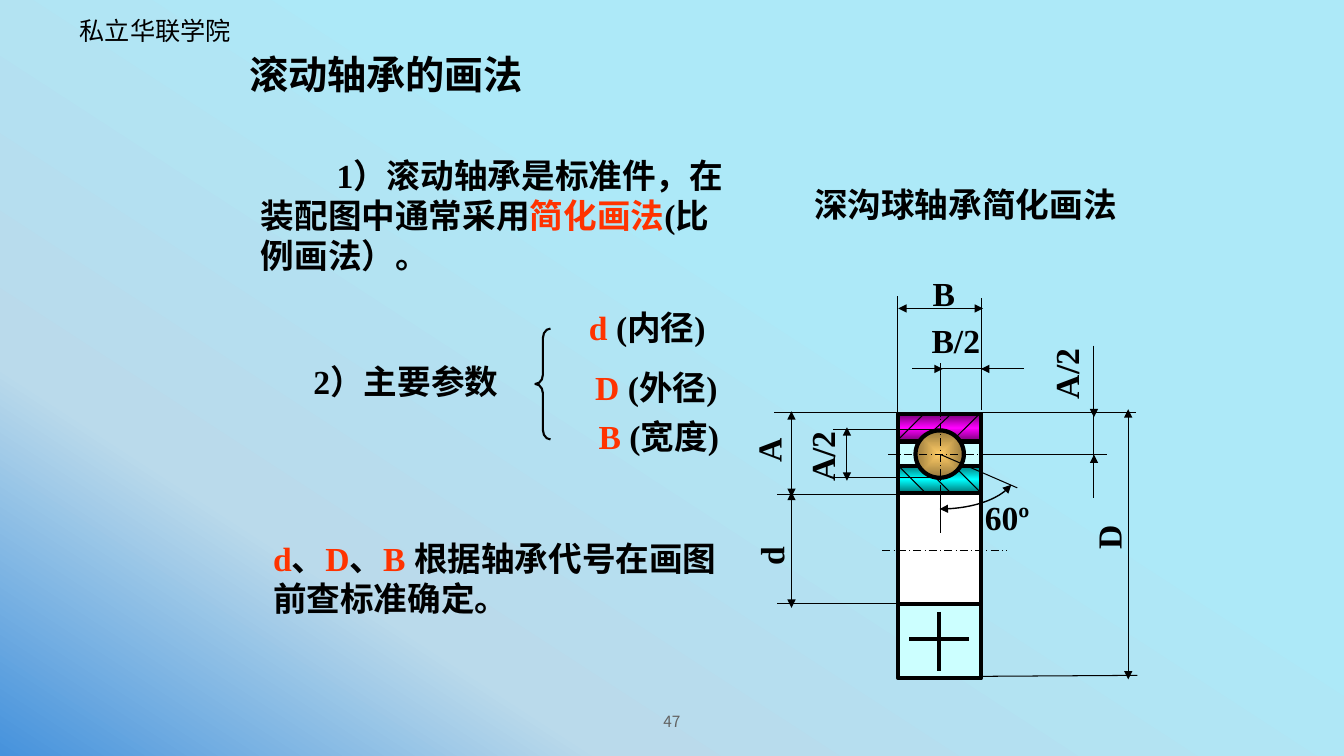
"""Builds a slide on the simplified drawing of a rolling bearing."""
from pptx import Presentation
from pptx.dml.color import RGBColor
from pptx.enum.dml import MSO_LINE
from pptx.enum.shapes import MSO_CONNECTOR, MSO_SHAPE
from pptx.enum.text import MSO_ANCHOR, PP_ALIGN
from pptx.oxml import parse_xml
from pptx.oxml.ns import nsdecls, qn
from pptx.util import Cm, Pt
from lxml.etree import SubElement

BLACK, RED = "000000", "FF3300"
SANS, SERIF = "Noto Sans CJK SC", "Times New Roman"
LEFT, RIGHT, TOP, BOTTOM = 8.91, 9.73, 4.11, 6.73
WIDTH, RING = RIGHT - LEFT, 0.27
BORE_TOP, BORE_BOTTOM = 4.89, 5.99
MIDDLE, BALL_Y, AXIS_Y = 9.33, 4.51, 5.46

TITLE = "滚动轴承的画法"
SKY = [(0, "4692DC"), (24, "BADAEB"), (62, "ADE9F8")]
OUTER_RING = [(0, "760076"), (50, "FF00FF"), (100, "760076")]
INNER_RING = [(0, "007676"), (50, "00FFFF"), (100, "007676")]
BALL = [(0, "FFCC66"), (100, "96783C")]

PARAGRAPHS = [
    ((2.49, 1.48, 4.94, 1.31), 0.75,
     [("1）滚动轴承是标准件，在装配图中通常采用", BLACK), ("简化画法", RED), ("(比例画法）。", BLACK)]),
    ((2.61, 5.28, 4.9, 0.91), 0,
     [("d", RED), ("、", BLACK), ("D", RED), ("、", BLACK), ("B ", RED),
      ("根据轴承代号在画图前查标准确定。", BLACK)]),
]
PARAMETERS = [
    ((5.18, 2.99, 2.48, 0.5), "d", " (内径)"),
    ((5.21, 3.59, 2.6, 0.5), "D", " (外径)"),
    ((5.36, 4.08, 2.35, 0.5), "B", " (宽度)"),
]
DIMENSIONS = [
    ("d", (7.45, 5.27, 0.39, 0.5), 270),
    ("D", (10.77, 5.08, 0.44, 0.5), 270),
    ("A", (7.4, 4.22, 0.44, 0.5), 270),
    ("A/2", (7.8, 4.28, 0.7, 0.5), 270),
    ("A/2", (10.22, 3.46, 0.7, 0.5), 270),
    ("B", (9.15, 2.66, 0.42, 0.5), 0),
    ("B/2", (9.14, 3.12, 0.68, 0.5), 0),
    ("60º", (9.67, 4.88, 0.64, 0.5), 0),
]
HATCHING = [
    (LEFT, 4.36, 9.17, 4.1), (9.26, 4.27, 9.43, TOP), (9.48, 4.34, 9.7, 4.12),
    (9.51, 4.67, RIGHT, BORE_TOP), (9.28, 4.74, 9.43, BORE_TOP), (LEFT, 4.62, 9.18, BORE_TOP),
]
CENTRE_LINES = [(8.81, BALL_Y, 9.9, BALL_Y), (MIDDLE, 4.04, MIDDLE, 5.06)]
EXTENSION_LINES = [
    (LEFT, 4.91, 7.71, 4.91), (LEFT, BORE_BOTTOM, 7.71, BORE_BOTTOM),
    (9.71, 4.09, 11.27, 4.09), (9.71, 6.71, 11.28, 6.7),
    (9.31, 4.74, 8.23, 4.74), (9.3, 4.26, 8.26, 4.26), (8.95, 4.09, 7.68, 4.09),
    (9.75, BALL_Y, 10.98, BALL_Y), (10.85, 3.43, 10.85, 4.94),
    (8.9, TOP, 8.9, 2.94), (RIGHT, 4.07, RIGHT, 2.96),
    (MIDDLE, 4.14, MIDDLE, 3.6), (9.05, 3.66, 10.16, 3.66), (MIDDLE, BALL_Y, 10.09, 4.84),
]
DOUBLE_ARROWS = [
    (7.85, 4.88, 7.85, 6.03), (11.19, 4.06, 11.19, 6.74), (8.4, 4.24, 8.4, 4.77),
    (7.85, 4.08, 7.85, 4.93), (LEFT, 3.06, 9.75, 3.06),
]
SINGLE_ARROWS = [
    (10.85, 3.99, 10.85, 4.14), (10.85, 4.65, 10.85, BALL_Y),
    (9.16, 3.66, 9.35, 3.66), (9.94, 3.66, RIGHT, 3.66),
]
CROSS = [(9.02, 6.34, 9.61, 6.34), (9.31, 6.07, 9.31, 6.66)]
ANGLE_ARC = [(9.32, 5.05), (9.63, 5.05), (9.91, 4.96), (10.03, 4.81)]


def lengths(*inches):
    return [Cm(value * 2.54) for value in inches]


def colour(value):
    return RGBColor.from_string(value)


def gradient(fill, owner, stops, direction):
    fill.gradient()
    marks = "".join(f'<a:gs pos="{at * 1000}"><a:srgbClr val="{value}"/></a:gs>' for at, value in stops)
    old = owner.find(".//" + qn("a:gradFill"))
    old.getparent().replace(old, parse_xml(
        f'<a:gradFill {nsdecls("a")} rotWithShape="1"><a:gsLst>{marks}</a:gsLst>{direction}</a:gradFill>'))


def linear(degrees):
    return f'<a:lin ang="{degrees * 60000}" scaled="0"/>'


def outline(part, width, ends=()):
    part.line.color.rgb = colour(BLACK)
    part.line.width = Pt(width)
    for end in ends:
        SubElement(part.line._get_or_add_ln(), qn(f"a:{end}"), type="triangle")


def draw_lines(shapes, segments, width=0.75, dash=None, ends=()):
    for segment in segments:
        line = shapes.add_connector(MSO_CONNECTOR.STRAIGHT, *lengths(*segment))
        outline(line, width)
        if dash:
            line.line.dash_style = dash
        outline(line, width, ends)
        SubElement(line._element.spPr, qn("a:effectLst"))


def draw_shape(shapes, kind, box, width=3, fill=None, direction=None):
    shape = shapes.add_shape(kind, *lengths(*box))
    shape.shadow.inherit = False
    if direction:
        gradient(shape.fill, shape._element, fill, direction)
    elif fill:
        shape.fill.solid()
        shape.fill.fore_color.rgb = colour(fill)
    else:
        shape.fill.background()
    outline(shape, width)
    return shape


def style(paragraph, size, face, value, bold=True):
    font = paragraph.font
    font.size, font.name, font.bold = Pt(size), face, bold
    font.color.rgb = colour(value)
    east = SANS if face == SERIF else face
    SubElement(paragraph._p.pPr.find(qn("a:defRPr")), qn("a:ea"), typeface=east)


def write(shapes, box, runs, size=24, face=SERIF, value=BLACK, bold=True, align=PP_ALIGN.CENTER,
          wrap=True, turn=0, indent=0, inset=0.1, anchor=MSO_ANCHOR.MIDDLE):
    area = shapes.add_textbox(*lengths(*box))
    area.rotation = turn
    frame = area.text_frame
    frame.word_wrap, frame.vertical_anchor = wrap, anchor
    frame.margin_left, frame.margin_right = lengths(inset, inset)
    paragraph = frame.paragraphs[0]
    paragraph.alignment = align
    if indent:
        paragraph._p.get_or_add_pPr().set("indent", str(lengths(indent)[0]))
    style(paragraph, size, face, value, bold)
    for words, shade in runs:
        run = paragraph.add_run()
        run.text = words
        if shade != value:
            run.font.color.rgb = colour(shade)


def draw_arc(shapes):
    points = []
    for step in range(25):
        t = step / 24
        weights = ((1 - t) ** 3, 3 * t * (1 - t) ** 2, 3 * t * t * (1 - t), t ** 3)
        points.append(lengths(*(sum(w * p[axis] for w, p in zip(weights, ANGLE_ARC)) for axis in (0, 1))))
    builder = shapes.build_freeform(*points[0])
    builder.add_line_segments(points[1:], close=False)
    arc = builder.convert_to_shape()
    arc.shadow.inherit = False
    arc.fill.background()
    outline(arc, 1, ("headEnd", "tailEnd"))


def draw_bearing(shapes):
    rectangle, dash = MSO_SHAPE.RECTANGLE, MSO_LINE.LONG_DASH_DOT
    draw_shape(shapes, rectangle, (LEFT, TOP, WIDTH, BOTTOM - TOP), fill="CCFFFF")
    draw_shape(shapes, rectangle, (LEFT, BORE_TOP, WIDTH, BORE_BOTTOM - BORE_TOP), fill="FFFFFF")
    draw_lines(shapes, [(8.75, AXIS_Y, 9.98, AXIS_Y)], dash=dash)
    for top, stops in ((TOP, OUTER_RING), (BORE_TOP - RING, INNER_RING)):
        draw_shape(shapes, rectangle, (LEFT, top, WIDTH, RING), fill=stops, direction=linear(90))
    draw_lines(shapes, HATCHING)
    draw_shape(shapes, MSO_SHAPE.OVAL, (9.08, 4.27, 0.48, 0.47), fill=BALL, direction=(
        '<a:path path="shape"><a:fillToRect l="50000" t="50000" r="50000" b="50000"/></a:path>'))
    draw_lines(shapes, CENTRE_LINES, dash=dash)
    draw_lines(shapes, EXTENSION_LINES)
    draw_lines(shapes, DOUBLE_ARROWS, ends=("headEnd", "tailEnd"))
    draw_lines(shapes, SINGLE_ARROWS, ends=("tailEnd",))
    draw_lines(shapes, [(MIDDLE, 4.88, MIDDLE, 5.29)], width=1)
    draw_lines(shapes, CROSS, width=3)
    draw_arc(shapes)


def main():
    deck = Presentation()
    deck.slide_width, deck.slide_height = lengths(13.33, 7.5)
    slide = deck.slides.add_slide(deck.slide_layouts[5])
    shapes = slide.shapes
    gradient(slide.background.fill, slide._element, SKY, linear(303))

    title = shapes.title
    title.left, title.top, title.width, title.height = lengths(2.42, 0.47, 8.5, 0.59)
    frame = title.text_frame
    frame.text, frame.vertical_anchor = TITLE, MSO_ANCHOR.MIDDLE
    frame.margin_left, frame.margin_right = lengths(0.05, 0.05)
    heading = frame.paragraphs[0]
    heading.alignment, heading.line_spacing = PP_ALIGN.LEFT, 0.9
    style(heading, 28, SANS, BLACK)

    write(shapes, (0.74, 0.1, 2.94, 0.4), [("私立华联学院", BLACK)], 18, "Noto Sans CJK JP",
          bold=False, align=PP_ALIGN.LEFT, inset=0.05, anchor=MSO_ANCHOR.TOP)
    write(shapes, (6.53, 7.01, 0.28, 0.29), [("47", "636363")], 11, SANS, "636363",
          bold=False, align=PP_ALIGN.LEFT, wrap=False, inset=0.05)
    draw_bearing(shapes)
    write(shapes, (7.84, 1.77, 3.47, 0.5), [("深沟球轴承简化画法", BLACK)], face=SANS)
    for box, indent, runs in PARAGRAPHS:
        write(shapes, box, runs, align=PP_ALIGN.LEFT, indent=indent)
    write(shapes, (3, 3.53, 2.05, 0.5), [("2）主要参数", BLACK)])
    for box, symbol, meaning in PARAMETERS:
        write(shapes, box, [(symbol, RED), (meaning, BLACK)])
    for label, box, turn in DIMENSIONS:
        write(shapes, box, [(label, BLACK)], wrap=False, turn=turn)
    brace = draw_shape(shapes, MSO_SHAPE.LEFT_BRACE, (5.31, 3.26, 0.15, 1.1), width=1.5)
    brace.adjustments[0] = 0.615
    deck.save("out.pptx")


if __name__ == "__main__":
    main()
